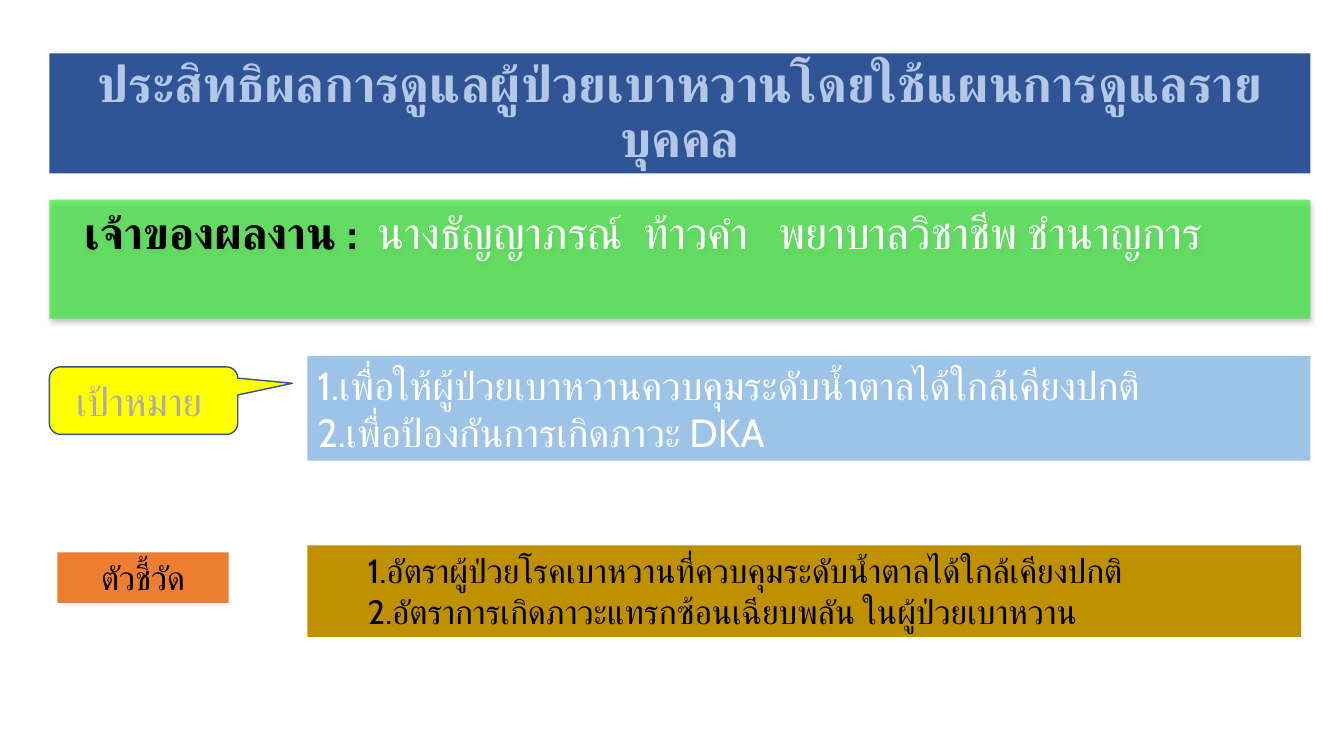
from lxml.etree import SubElement
from pptx import Presentation
from pptx.dml.color import RGBColor
from pptx.enum.shapes import MSO_SHAPE
from pptx.enum.text import MSO_ANCHOR, PP_ALIGN
from pptx.oxml.ns import qn
from pptx.util import Pt

WHITE = RGBColor(0xFF, 0xFF, 0xFF)
BLACK = RGBColor(0, 0, 0)
NAVY = RGBColor(0x2F, 0x55, 0x97)
PALE_BLUE = RGBColor(0xB4, 0xC7, 0xE7)
GREEN = RGBColor(0x39, 0xE7, 0x39)
SKY = RGBColor(0x9D, 0xC3, 0xE6)
YELLOW = RGBColor(0xFF, 0xFF, 0)
OUTLINE = RGBColor(0x32, 0x54, 0x91)
GRAY = RGBColor(0xAF, 0xAB, 0xAB)
GOLD = RGBColor(0xBF, 0x90, 0)
ORANGE = RGBColor(0xED, 0x7D, 0x31)

LEFT = 35.3
CONTENT_LEFT = 219.6
FULL_WIDTH = 900.7


def add_run(paragraph, text, *, size, color, bold=False, font="Cabin"):
    run = paragraph.add_run()
    run.text = text
    run.font.name = font
    run.font.size = Pt(size)
    run.font.bold = bold
    run.font.color.rgb = color
    # Thai letters take their typeface from the complex-script font
    SubElement(run.font._element, qn("a:cs"), typeface=font)


class SlideBuilder:
    def __init__(self, slide, font="Cabin"):
        self.slide = slide
        self.font = font

    def box(self, left, top, width, height, fill, kind=MSO_SHAPE.RECTANGLE, line=None):
        shape = self.slide.shapes.add_shape(kind, Pt(left), Pt(top), Pt(width), Pt(height))
        shape.shadow.inherit = False
        shape.fill.solid()
        shape.fill.fore_color.rgb = fill
        if line is None:
            shape.line.fill.background()
        else:
            shape.line.color.rgb = line
            shape.line.width = Pt(1)
        return shape

    def callout(self, left, top, width, height, fill, line, adjustments):
        shape = self.box(left, top, width, height, fill,
                         MSO_SHAPE.ROUNDED_RECTANGULAR_CALLOUT, line)
        for index, value in enumerate(adjustments):
            shape.adjustments[index] = value
        return shape

    def add_text(self, shape, paragraphs, align=PP_ALIGN.LEFT, anchor=MSO_ANCHOR.TOP,
                 indent=0, line_spacing=None):
        """Fill a shape; each paragraph is a list of (text, format) runs."""
        frame = shape.text_frame
        frame.word_wrap = True
        frame.vertical_anchor = anchor
        for index, runs in enumerate(paragraphs):
            paragraph = frame.add_paragraph() if index else frame.paragraphs[0]
            paragraph.alignment = align
            paragraph.line_spacing = line_spacing
            if indent:
                properties = paragraph._p.get_or_add_pPr()
                properties.set("marL", "0")
                properties.set("indent", str(Pt(indent)))
            for text, style in runs:
                add_run(paragraph, text, font=self.font, **style)

    def soften(self, shape, opacity, shadow_opacity, blur, distance):
        """Make the fill translucent and drop a black shadow straight down."""
        properties = shape._element.spPr
        fill_color = properties.find(qn("a:solidFill"))[0]
        SubElement(fill_color, qn("a:alpha"), val=str(opacity * 1000))
        shadow = SubElement(properties.find(qn("a:effectLst")), qn("a:outerShdw"),
                            blurRad=str(Pt(blur)), dist=str(Pt(distance)),
                            dir="5400000", rotWithShape="0")
        color = SubElement(shadow, qn("a:srgbClr"), val=str(BLACK))
        SubElement(color, qn("a:alpha"), val=str(shadow_opacity * 1000))


def main():
    presentation = Presentation()
    presentation.slide_width = Pt(960)
    presentation.slide_height = Pt(540)
    builder = SlideBuilder(presentation.slides.add_slide(presentation.slide_layouts[6]))
    centered = {"align": PP_ALIGN.CENTER, "anchor": MSO_ANCHOR.MIDDLE}

    title = builder.box(LEFT, 38.2, FULL_WIDTH, 85.7, NAVY)
    builder.add_text(title, [[("ประสิทธิผลการดูแลผู้ป่วยเบาหวานโดยใช้แผนการดูแลรายบุคคล",
                               {"size": 36, "color": PALE_BLUE, "bold": True})]],
                     line_spacing=0.9, **centered)

    author = builder.box(LEFT, 142.6, FULL_WIDTH, 85, GREEN)
    builder.soften(author, opacity=69, shadow_opacity=32, blur=3.5, distance=2.2)
    builder.add_text(author, [[
        ("เจ้าของผลงาน :  ", {"size": 32, "color": BLACK, "bold": True}),
        ("นางธัญญาภรณ์  ท้าวคำ   พยาบาลวิชาชีพ ชำนาญการ", {"size": 32, "color": WHITE}),
    ]], indent=18)

    goals = builder.box(CONTENT_LEFT, 254.2, 716.4, 74.9, SKY)
    goal_style = {"size": 28, "color": WHITE}
    builder.add_text(goals, [
        [("1.เพื่อให้ผู้ป่วยเบาหวานควบคุมระดับน้ำตาลได้ใกล้เคียงปกติ", goal_style)],
        [("2.เพื่อป้องกันการเกิดภาวะ DKA", goal_style)],
    ])

    goal_label = builder.callout(LEFT, 262.1, 134.6, 48.2, YELLOW, OUTLINE,
                                 (0.79, -0.257, 0.167))
    builder.add_text(goal_label, [[("เป้าหมาย ", {"size": 28, "color": GRAY})]], **centered)

    indicators = builder.box(CONTENT_LEFT, 389.5, 709.9, 65.5, GOLD)
    indicator_style = {"size": 24, "color": BLACK}
    builder.add_text(indicators, [
        [("1.อัตราผู้ป่วยโรคเบาหวานที่ควบคุมระดับน้ำตาลได้ใกล้เคียงปกติ", indicator_style)],
        [("2.อัตราการเกิดภาวะแทรกซ้อนเฉียบพลัน ในผู้ป่วยเบาหวาน", indicator_style)],
    ], indent=36)

    indicator_label = builder.box(41, 394.6, 122.4, 36, ORANGE)
    builder.add_text(indicator_label, [[("ตัวชี้วัด", indicator_style)]],
                     align=PP_ALIGN.CENTER)

    presentation.save("out.pptx")


if __name__ == "__main__":
    main()
